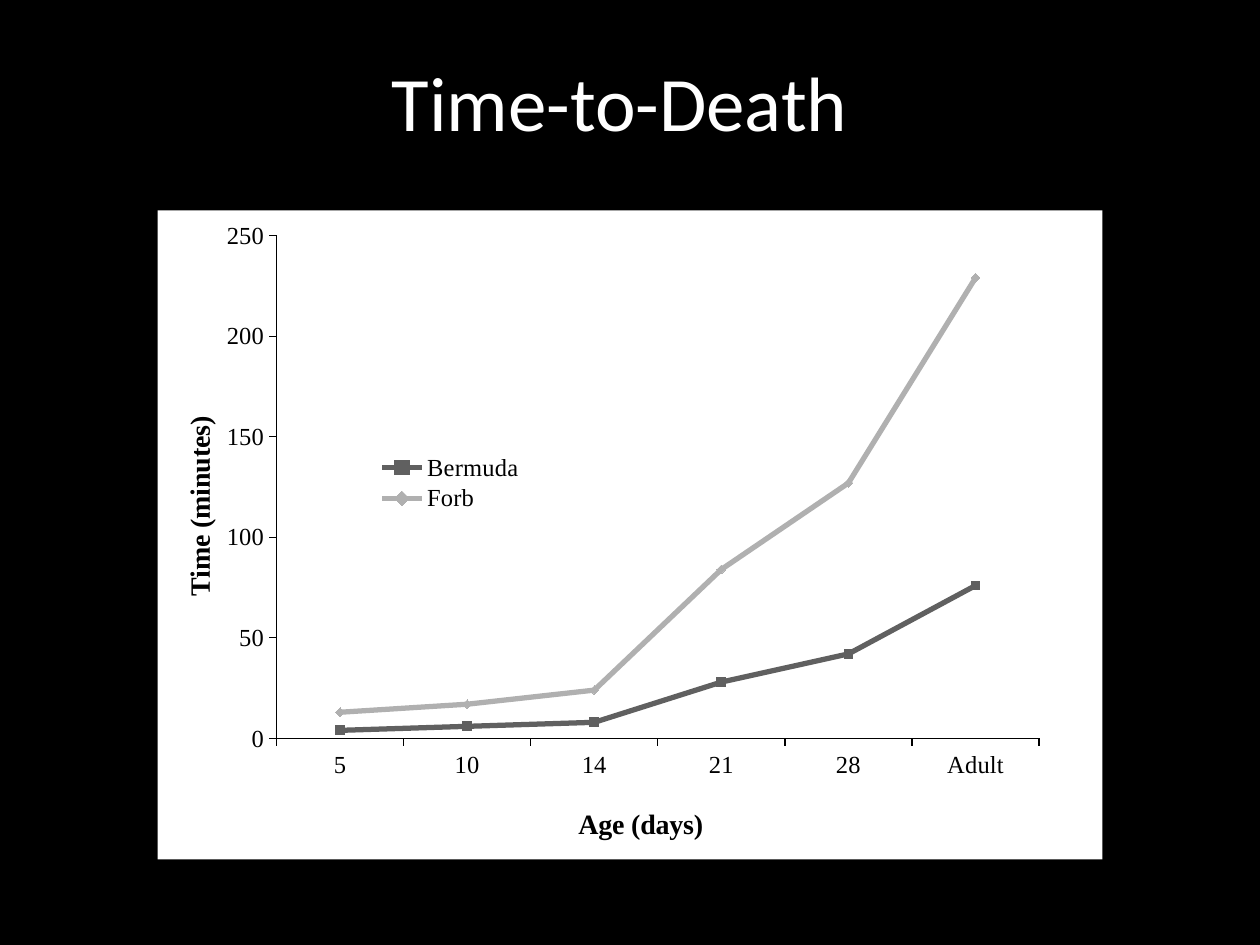
from lxml.etree import SubElement
from pptx import Presentation
from pptx.chart.data import CategoryChartData
from pptx.dml.color import RGBColor
from pptx.enum.chart import XL_CHART_TYPE, XL_LEGEND_POSITION, XL_MARKER_STYLE, XL_TICK_MARK
from pptx.enum.text import MSO_ANCHOR, PP_ALIGN
from pptx.oxml.ns import qn
from pptx.util import Inches, Pt

BLACK = RGBColor(0x00, 0x00, 0x00)
WHITE = RGBColor(0xFF, 0xFF, 0xFF)
DARK_GRAY = RGBColor(0x60, 0x60, 0x60)
LIGHT_GRAY = RGBColor(0xB0, 0xB0, 0xB0)
CHART_FONT = "Times New Roman"

HEADING = "Time-to-Death"
AGES = ["5", "10", "14", "21", "28", "Adult"]
FORAGES = [
    ("Bermuda", [4, 6, 8, 28, 42, 76], DARK_GRAY, XL_MARKER_STYLE.SQUARE),
    ("Forb", [13, 17, 24, 84, 127, 229], LIGHT_GRAY, XL_MARKER_STYLE.DIAMOND),
]
AGE_TITLE = ("Age (days)", {"x": 0.44, "y": 0.91}, "0")
TIME_TITLE = ("Time (minutes)", {"x": 0.02, "y": 0.31}, "-5400000")
PLOT_AREA = {"x": 0.126, "y": 0.039, "w": 0.807, "h": 0.775}
LEGEND_AREA = {"x": 0.23, "y": 0.37, "w": 0.16, "h": 0.1}


def style_font(font, size, color=BLACK, name=CHART_FONT, bold=False):
    font.size, font.name, font.bold = Pt(size), name, bold
    font.color.rgb = color


def place(element, index, area, inner=False):
    for old in element.findall(qn("c:layout")):
        element.remove(old)
    layout = SubElement(element, qn("c:layout"))
    element.insert(index, layout)
    manual = SubElement(layout, qn("c:manualLayout"))
    if inner:
        SubElement(manual, qn("c:layoutTarget"), val="inner")
    for side in ("x", "y"):
        SubElement(manual, qn(f"c:{side}Mode"), val="edge")
    for side, share in area.items():
        SubElement(manual, qn(f"c:{side}"), val=str(share))


def style_axis(axis, title, area, rotation):
    axis.has_major_gridlines = False
    axis.major_tick_mark = XL_TICK_MARK.OUTSIDE
    axis.minor_tick_mark = XL_TICK_MARK.NONE
    axis.format.line.color.rgb = BLACK
    axis.format.line.width = Pt(0.75)
    style_font(axis.tick_labels.font, 14)
    frame = axis.axis_title.text_frame
    run = frame.paragraphs[0].add_run()
    run.text = title
    style_font(run.font, 16, bold=True)
    axis_title = axis.axis_title._element
    axis_title.find(".//" + qn("a:bodyPr")).set("rot", rotation)
    place(axis_title, 1, area)


def add_heading(slide):
    box = slide.shapes.add_textbox(Inches(0.42), Inches(0.17), Inches(9), Inches(1.25))
    frame = box.text_frame
    frame.word_wrap = True
    frame.vertical_anchor = MSO_ANCHOR.MIDDLE
    paragraph = frame.paragraphs[0]
    paragraph.alignment = PP_ALIGN.CENTER
    run = paragraph.add_run()
    run.text = HEADING
    style_font(run.font, 44, WHITE, "Calibri")


def add_time_chart(slide):
    data = CategoryChartData()
    data.categories = AGES
    for name, minutes, _, _ in FORAGES:
        data.add_series(name, minutes)
    chart = slide.shapes.add_chart(
        XL_CHART_TYPE.LINE_MARKERS,
        Inches(1.25), Inches(1.67), Inches(7.5), Inches(5.15), data,
    ).chart
    chart.has_title = False
    style_font(chart.font, 10)

    style_axis(chart.category_axis, *AGE_TITLE)
    style_axis(chart.value_axis, *TIME_TITLE)
    chart.value_axis.minimum_scale = 0
    chart.value_axis.maximum_scale = 250
    chart.value_axis.major_unit = 50

    chart.has_legend = True
    chart.legend.position = XL_LEGEND_POSITION.RIGHT
    chart.legend.include_in_layout = False
    style_font(chart.legend.font, 14)
    place(chart.legend._element, 1, LEGEND_AREA)

    plot = chart.plots[0]
    plot.vary_by_categories = False
    for series, (_, _, color, marker) in zip(plot.series, FORAGES):
        series.smooth = False
        series.format.line.color.rgb = color
        series.format.line.width = Pt(3)
        series.marker.style = marker
        series.marker.size = 5
        series.marker.format.fill.solid()
        series.marker.format.fill.fore_color.rgb = color
        series.marker.format.line.color.rgb = color

    space = chart._chartSpace
    place(space.find(".//" + qn("c:plotArea")), 0, PLOT_AREA, inner=True)
    background = SubElement(space, qn("c:spPr"))
    space.find(qn("c:chart")).addnext(background)
    fill = SubElement(background, qn("a:solidFill"))
    SubElement(fill, qn("a:srgbClr"), val=str(WHITE))


def main():
    deck = Presentation()
    deck.slide_width, deck.slide_height = Inches(10), Inches(7.5)
    slide = deck.slides.add_slide(deck.slide_layouts[6])
    slide.background.fill.solid()
    slide.background.fill.fore_color.rgb = BLACK
    add_heading(slide)
    add_time_chart(slide)
    deck.save("out.pptx")


if __name__ == "__main__":
    main()
